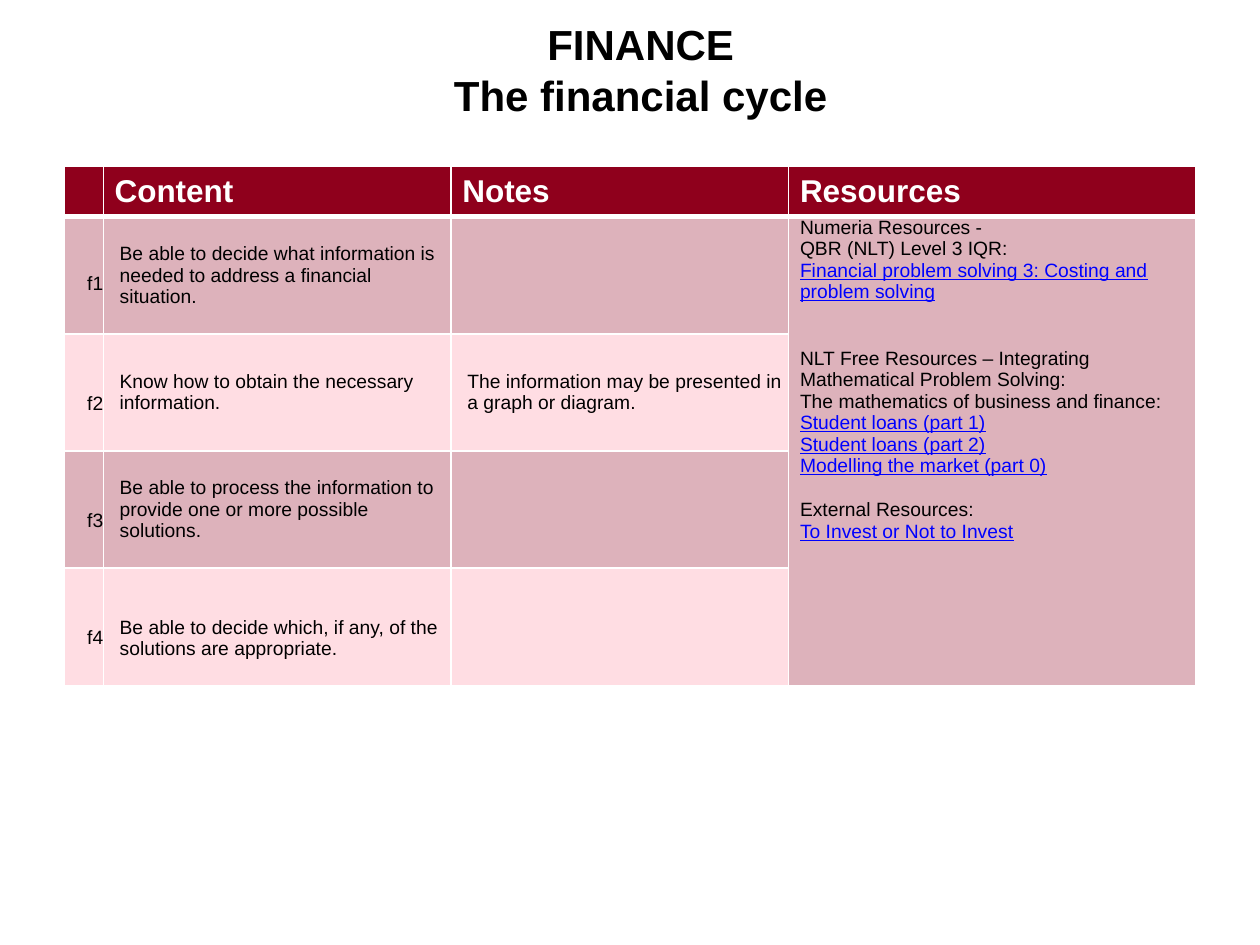
import pptx
import pptx.dml.color
import pptx.enum.text
import pptx.oxml
import pptx.oxml.ns
import pptx.util

Inches = pptx.util.Inches
Pt = pptx.util.Pt
ALIGN = pptx.enum.text.PP_ALIGN
ANCHOR = pptx.enum.text.MSO_ANCHOR

WHITE, BLACK, LINK = "FFFFFF", "000000", "0000FF"
HEADER, DARK, LIGHT = "8F001C", "DDB2BB", "FFDDE3"

COLS = [0.31, 2.76, 2.68, 3.23]
ROWS = [0.4] + [0.93] * 4
HEADINGS = ["", "Content", "Notes", "Resources"]

# Code, content lines and notes lines; \v is a line break inside a paragraph
TOPICS = [
    ("f1", ["Be able to decide what information is\vneeded to address a financial\vsituation."], []),
    ("f2", ["Know how to obtain the necessary", "information."],
     ["The information may be presented in", "a graph or diagram."]),
    ("f3", ["Be able to process the information to\vprovide one or more possible\vsolutions."], []),
    ("f4", ["Be able to decide which, if any, of the\vsolutions are appropriate."], []),
]

# Text, whether it is styled as a link, and space before in points
RESOURCES = [
    ("Numeria Resources -\vQBR (NLT) Level 3 IQR:", False, 0),
    ("Financial problem solving 3: Costing and problem solving", True, 0),
    ("NLT Free Resources – Integrating", False, 26),
    ("Mathematical Problem Solving:", False, 0),
    ("The mathematics of business and finance:", False, 0),
    ("Student loans (part 1)", True, 0),
    ("Student loans (part 2)", True, 0),
    ("Modelling the market (part 0)", True, 0),
    ("External Resources:", False, 13),
    ("To Invest or Not to Invest", True, 0),
]


def rgb(value):
    return pptx.dml.color.RGBColor.from_string(value)


def add_text(tf, text, size=11, color=BLACK, bold=False, underline=False,
             align=ALIGN.LEFT, before=0):
    """Write one paragraph, using the empty first one if it is free."""
    p = tf.paragraphs[0]
    if p.runs:
        p = tf.add_paragraph()
    p.alignment = align
    if before:
        p.space_before = Pt(before)
    for i, line in enumerate(text.split("\v")):
        if i:
            p.add_line_break()
        r = p.add_run()
        r.text = line
        r.font.name = "Arial"
        r.font.size = Pt(size)
        r.font.bold = bold
        r.font.underline = underline
        r.font.color.rgb = rgb(color)


def set_borders(cell, top=1, bottom=1):
    tc_pr = cell._tc.get_or_add_tcPr()
    widths = {"L": 1, "R": 1, "T": top, "B": bottom}
    for i, (side, width) in enumerate(widths.items()):
        tc_pr.insert(i, pptx.oxml.parse_xml(
            f'<a:ln{side} {pptx.oxml.ns.nsdecls("a")} w="{Pt(width)}"><a:solidFill>'
            f'<a:srgbClr val="{WHITE}"/></a:solidFill></a:ln{side}>'))


def style_cell(cell, fill, left=0, top=0, anchor=ANCHOR.MIDDLE):
    cell.fill.solid()
    cell.fill.fore_color.rgb = rgb(fill)
    cell.margin_left, cell.margin_top = Inches(left), Inches(top)
    cell.margin_right = cell.margin_bottom = 0
    cell.vertical_anchor = anchor


def add_title(s):
    sp = s.shapes.add_textbox(Inches(3.5), Inches(0.15), Inches(3.17), Inches(0.81))
    tf = sp.text_frame
    tf.word_wrap = True
    tf.margin_left = tf.margin_right = tf.margin_top = tf.margin_bottom = 0
    for line in ("FINANCE", "The financial cycle"):
        add_text(tf, line, size=24, bold=True, align=ALIGN.CENTER)


def add_topic_table(s):
    table = s.shapes.add_table(len(ROWS), len(COLS), Inches(0.51), Inches(1.32),
                               Inches(sum(COLS)), Inches(sum(ROWS))).table
    for col, width in zip(table.columns, COLS):
        col.width = Inches(width)
    for row, height in zip(table.rows, ROWS):
        row.height = Inches(height)

    # Header row
    for c, heading in enumerate(HEADINGS):
        cell = table.cell(0, c)
        style_cell(cell, HEADER, left=0.09)
        if heading:
            add_text(cell.text_frame, heading, size=18, color=WHITE, bold=True)

    # Topic rows
    for i, (code, content, notes) in enumerate(TOPICS, 1):
        fill = DARK if i % 2 else LIGHT
        cell = table.cell(i, 0)
        style_cell(cell, fill, top=0.45 if i == 1 else 0.47, anchor=ANCHOR.TOP)
        add_text(cell.text_frame, code, align=ALIGN.RIGHT)
        for c, lines in ((1, content), (2, notes)):
            cell = table.cell(i, c)
            style_cell(cell, fill, left=0.13, top=0.18 if code == "f4" else 0)
            for line in lines:
                add_text(cell.text_frame, line)

    # Resources cell beside all topics
    cell = table.cell(1, 3)
    cell.merge(table.cell(len(TOPICS), 3))
    style_cell(cell, DARK, left=0.09, anchor=ANCHOR.TOP)
    for text, is_link, before in RESOURCES:
        add_text(cell.text_frame, text, color=LINK if is_link else BLACK,
                 underline=is_link, before=before)

    # White grid, heavier below the header
    for r in range(len(ROWS)):
        for c in range(len(COLS)):
            set_borders(table.cell(r, c), top=3 if r == 1 else 1,
                        bottom=3 if r == 0 else 1)


def main():
    prs = pptx.Presentation()
    prs.slide_width, prs.slide_height = Inches(10), Inches(7.5)
    s = prs.slides.add_slide(prs.slide_layouts[6])
    add_title(s)
    add_topic_table(s)
    prs.save("out.pptx")


if __name__ == "__main__":
    main()
